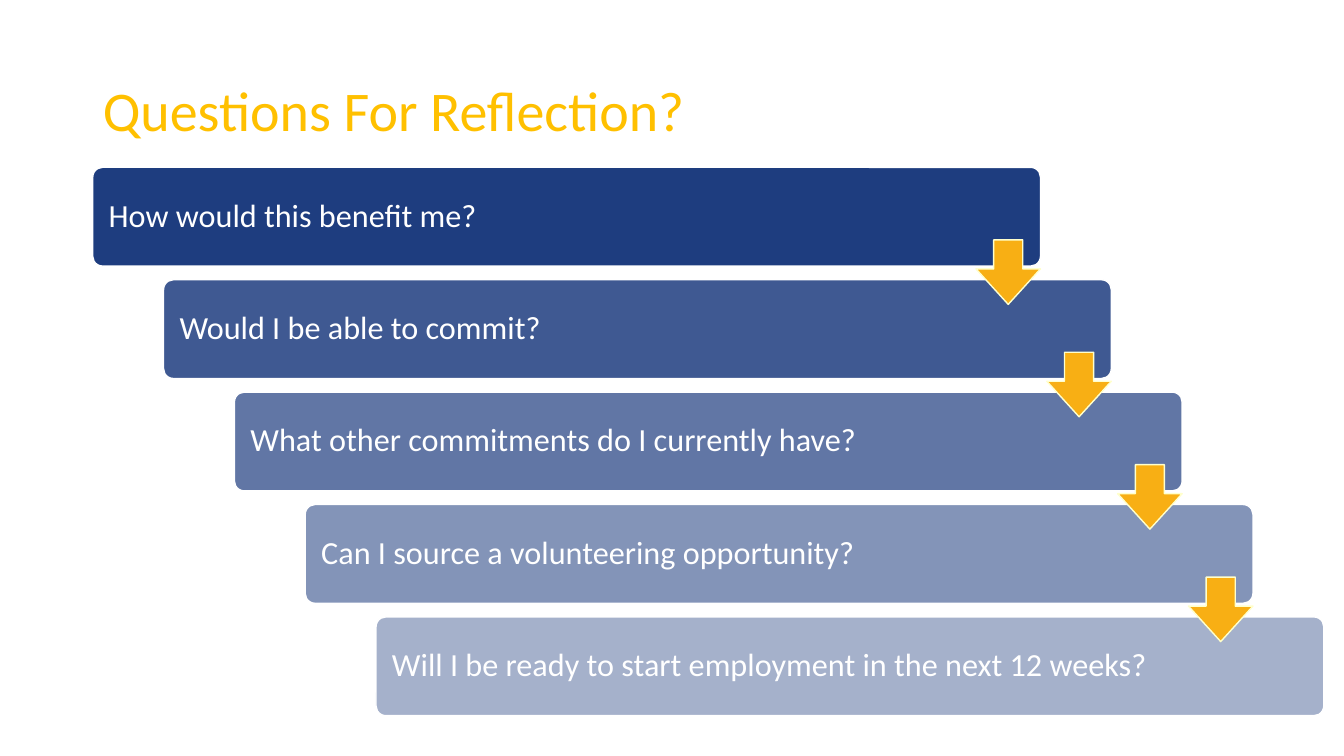
from pptx import Presentation
from pptx.dml.color import RGBColor
from pptx.enum.shapes import MSO_SHAPE as Shape
from pptx.enum.text import MSO_ANCHOR as Anchor, PP_ALIGN as Align
from pptx.oxml.ns import qn
from pptx.util import Inches, Pt
from lxml.etree import SubElement

NAVY = RGBColor(0x1E, 0x3D, 0x7F)
GOLD = RGBColor(0xFF, 0xC0, 0x00)
AMBER = RGBColor(0xF8, 0xAF, 0x14)
CREAM = RGBColor(0xFF, 0xFF, 0xCC)
WHITE = RGBColor(0xFF, 0xFF, 0xFF)

LEFT, TOP = 0.92, 1.66
COL, ROW = 0.7025, 1.115
BAR_W, BAR_H = 9.4, 0.98
ARROW = 0.64
DROP = 0.72
PAD = 0.13

ASKS = [
    "How would this benefit me?",
    "Would I be able to commit?",
    "What other commitments do I currently have?",
    "Can I source a volunteering opportunity?",
    "Will I be ready to start employment in the next 12 weeks?",
]


def write(frame, text, size, color):
    frame.text = text
    frame.word_wrap = True
    frame.vertical_anchor = Anchor.MIDDLE
    para = frame.paragraphs[0]
    para.alignment = Align.LEFT
    para.line_spacing = 0.9
    font = para.runs[0].font
    font.name = "Calibri"
    font.size = Pt(size)
    font.color.rgb = color


def add_box(slide, kind, box, fill, edge, ratios):
    shape = slide.shapes.add_shape(kind, *map(Inches, box))
    shape.shadow.inherit = False
    shape.fill.solid()
    shape.fill.fore_color.rgb = fill
    shape.line.color.rgb = edge
    shape.line.width = Pt(1)
    for i, ratio in enumerate(ratios):
        shape.adjustments[i] = ratio
    return shape


def fade(shape, share):
    color = shape.fill._xPr.find(qn("a:solidFill"))[0]
    SubElement(color, qn("a:alpha")).set("val", str(share * 1000))


def add_bar(slide, step, text):
    box = (LEFT + step * COL, TOP + step * ROW, BAR_W, BAR_H)
    bar = add_box(slide, Shape.ROUNDED_RECTANGLE, box, NAVY, WHITE, [0.1])
    if step:
        fade(bar, 100 - 15 * step)
    frame = bar.text_frame
    frame.margin_left = frame.margin_right = Inches(PAD)
    write(frame, text, 23, WHITE)


def add_arrow(slide, step):
    left = LEFT + step * COL + BAR_W - ARROW
    box = (left, TOP + step * ROW + DROP, ARROW, ARROW)
    add_box(slide, Shape.DOWN_ARROW, box, AMBER, CREAM, [0.45, 0.55])


def add_title(slide, text):
    title = slide.shapes.title
    title.left, title.top = Inches(LEFT), Inches(0.4)
    title.width, title.height = Inches(11.5), Inches(1.45)
    write(title.text_frame, text, 40, GOLD)


def main():
    deck = Presentation()
    deck.slide_width, deck.slide_height = Inches(13.33), Inches(7.5)
    slide = deck.slides.add_slide(deck.slide_layouts[5])
    add_title(slide, "Questions For Reflection?")
    for step, text in enumerate(ASKS):
        add_bar(slide, step, text)
    for step in range(len(ASKS) - 1):
        add_arrow(slide, step)
    deck.save("out.pptx")


if __name__ == "__main__":
    main()
